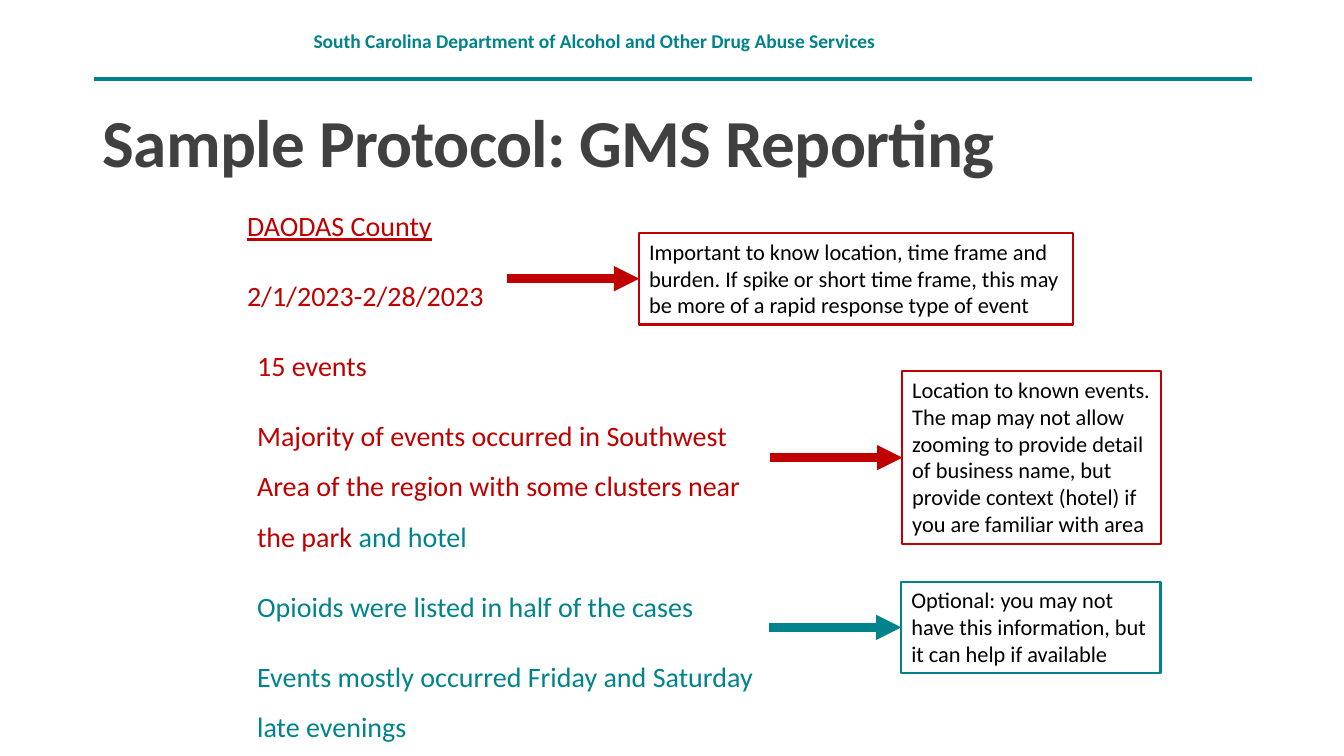
from dataclasses import dataclass
from lxml.etree import SubElement
from pptx import Presentation
from pptx.dml.color import RGBColor as Color
from pptx.enum.shapes import MSO_CONNECTOR as Connector, MSO_SHAPE as Shape
from pptx.enum.text import MSO_ANCHOR as Anchor, MSO_AUTO_SIZE as AutoSize, PP_ALIGN as Align
from pptx.oxml.ns import qn
from pptx.util import Inches, Pt


@dataclass(frozen=True)
class Theme:
    font: str = "Calibri"
    teal: str = "00838B"
    red: str = "C00000"
    title: str = "404040"
    note: str = "000000"
    bullet: str = "015B8C"
    header_size: float = 13.9
    title_size: float = 48
    body_size: float = 20
    note_size: float = 16


theme = Theme()
presentation = Presentation()
presentation.slide_width, presentation.slide_height = Inches(13.33), Inches(7.5)
column = presentation.slide_width / 100
row = presentation.slide_height / 100
slide = presentation.slides.add_slide(presentation.slide_layouts[1])


def format_run(run, size, color, bold=False):
    run.font.name, run.font.size, run.font.bold = theme.font, Pt(size), bold
    run.font.color.rgb = Color.from_string(color)


def add_line(start, end, color, width):
    """Draw a straight line between two points given in columns and rows."""
    line = slide.shapes.add_connector(
        Connector.STRAIGHT, int(start[0] * column), int(start[1] * row),
        int(end[0] * column), int(end[1] * row))
    line.line.color.rgb = Color.from_string(color)
    line.line.width = Pt(width)
    SubElement(line._element.spPr, qn("a:effectLst"))
    return line


# Header band
add_line((6.98, 10.4), (93.17, 10.4), theme.teal, 2.75)
header = slide.shapes.add_textbox(
    int(22.88 * column), int(1.33 * row), int(54.09 * column), int(8.4 * row))
frame = header.text_frame
frame.word_wrap, frame.vertical_anchor = True, Anchor.MIDDLE
frame.margin_left = frame.margin_right = Inches(0.06)
frame.margin_top = frame.margin_bottom = Inches(0.03)
frame.text = "South Carolina Department of Alcohol and Other Drug Abuse Services"
frame.paragraphs[0].line_spacing = 0.9
format_run(frame.paragraphs[0].runs[0], theme.header_size, theme.teal, bold=True)

# Title
title = slide.shapes.title
title.left, title.top = int(6.9 * column), int(14.27 * row)
title.width, title.height = int(86.27 * column), int(10.4 * row)
frame = title.text_frame
frame.text = "Sample Protocol: GMS Reporting"
frame.auto_size, frame.vertical_anchor = AutoSize.NONE, Anchor.MIDDLE
paragraph = frame.paragraphs[0]
paragraph.alignment, paragraph.line_spacing = Align.LEFT, 0.85
format_run(paragraph.runs[0], theme.title_size, theme.title, bold=True)
paragraph.runs[0].font._element.set("spc", "-50")

# Report: each paragraph is a list of coloured pieces
report = [
    [("DAODAS County", theme.red)],
    [("2/1/2023-2/28/2023", theme.red)],
    [("15 events", theme.red)],
    [("Majority of events occurred in Southwest Area of the region with some "
      "clusters near the park ", theme.red), ("and hotel", theme.teal)],
    [("Opioids were listed in half of the cases", theme.teal)],
    [("Events mostly occurred Friday and Saturday late evenings", theme.teal)],
]
heading_count = 2
body = slide.placeholders[1]
body.left, body.top = int(17.63 * column), int(24.67 * row)
body.width, body.height = int(39.68 * column), int(68 * row)
frame = body.text_frame
frame.auto_size, frame.vertical_anchor = AutoSize.NONE, Anchor.TOP
for index, pieces in enumerate(report):
    paragraph = frame.paragraphs[0] if index == 0 else frame.add_paragraph()
    properties = paragraph._p.get_or_add_pPr()
    indent = 0 if index < heading_count else Inches(0.1)
    properties.set("marL", str(indent))
    properties.set("indent", str(-indent))
    if index < heading_count:
        SubElement(properties, qn("a:buNone"))
    else:
        bullet_color = SubElement(properties, qn("a:buClr"))
        SubElement(bullet_color, qn("a:srgbClr")).set("val", theme.bullet)
        SubElement(properties, qn("a:buChar")).set("char", " ")
    paragraph.line_spacing = 1.5
    paragraph.space_before = Pt(12 if index else 0)
    paragraph.space_after = Pt(2)
    for text, color in pieces:
        run = paragraph.add_run()
        run.text = text
        format_run(run, theme.body_size, color)
frame.paragraphs[0].runs[0].font.underline = True

# Notes, each with an arrow into its left side: left, top, width, height
arrow_length = 9.83
notes = [
    (47.56, 30.8, 32.26, 12.13, theme.red,
     "Important to know location, time frame and burden. If spike or short time "
     "frame, this may be more of a rapid response type of event"),
    (67.14, 49.07, 19.28, 22.93, theme.red,
     "Location to known events. The map may not allow zooming to provide detail of "
     "business name, but provide context (hotel) if you are familiar with area"),
    (67.07, 76.93, 19.28, 12.13, theme.teal,
     "Optional: you may not have this information, but it can help if available"),
]
for left, top, width, height, color, text in notes:
    note = slide.shapes.add_shape(
        Shape.RECTANGLE, int(left * column), int(top * row),
        int(width * column), int(height * row))
    note.shadow.inherit = False
    note.fill.background()
    note.line.color.rgb = Color.from_string(color)
    note.line.width = Pt(1.5)
    frame = note.text_frame
    frame.text = text
    frame.word_wrap, frame.auto_size = True, AutoSize.SHAPE_TO_FIT_TEXT
    frame.vertical_anchor = Anchor.TOP
    frame.paragraphs[0].alignment = Align.LEFT
    format_run(frame.paragraphs[0].runs[0], theme.note_size, theme.note)

    middle = top + height / 2
    arrow = add_line((left - arrow_length, middle), (left, middle), color, 6)
    arrow.end_connect(note, 1)
    SubElement(arrow.line._get_or_add_ln(), qn("a:tailEnd")).set("type", "triangle")

presentation.save("out.pptx")
